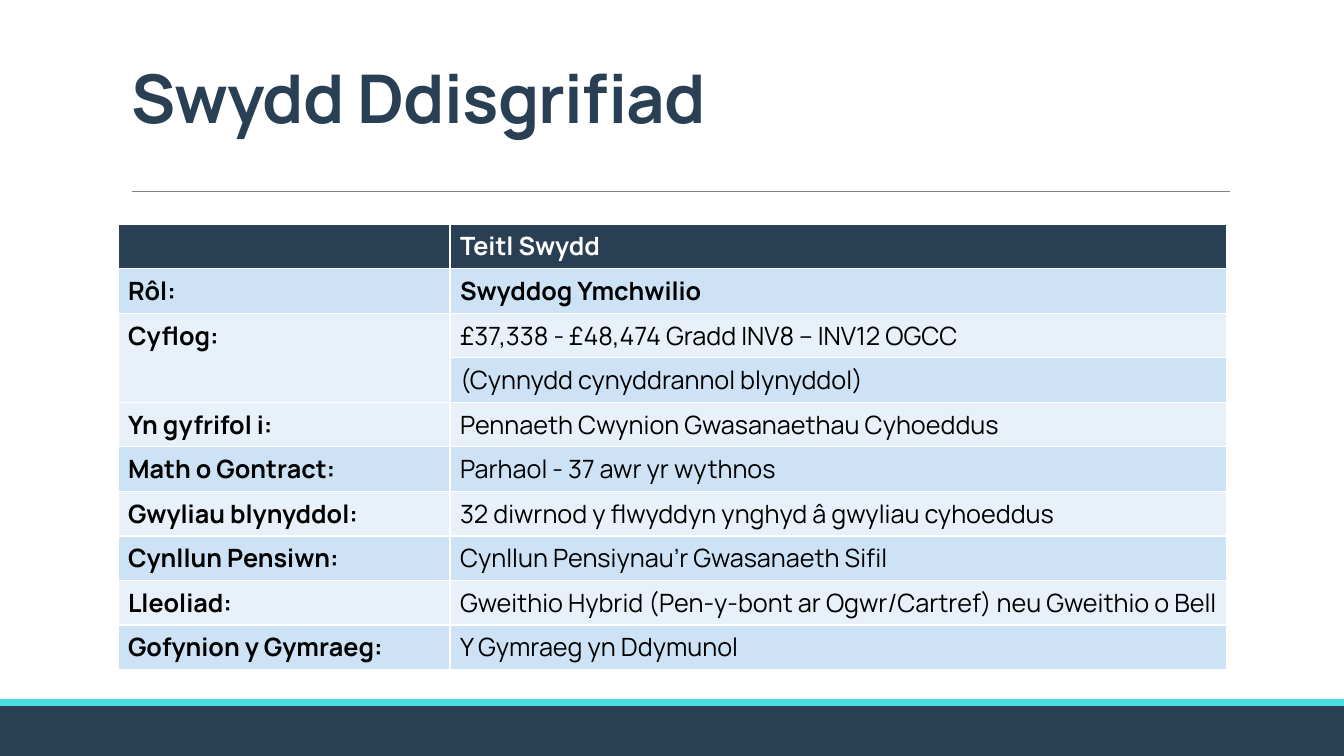
from lxml.etree import SubElement
from pptx import Presentation
from pptx.dml.color import RGBColor
from pptx.enum.shapes import MSO_CONNECTOR as Connector, MSO_SHAPE as Shape
from pptx.enum.text import MSO_ANCHOR as Anchor, MSO_AUTO_SIZE as AutoSize, PP_ALIGN as Align
from pptx.oxml.ns import qn
from pptx.util import Pt

NAVY = RGBColor(0x29, 0x40, 0x54)
TURQUOISE = RGBColor(0x4A, 0xDE, 0xE3)
GREY = RGBColor(0x80, 0x80, 0x80)
WHITE = RGBColor(0xFF, 0xFF, 0xFF)
BLACK = RGBColor(0, 0, 0)
BANDS = [RGBColor(0xE8, 0xF1, 0xFA), RGBColor(0xCD, 0xE3, 0xF5)]

FONT = "Manrope"
WIDTH, HEIGHT = 1344, 756
EMU_PER_PX = 914400 / 100.8

HEADER = ("", "Teitl Swydd")
DETAILS = [
    ("Rôl:", "Swyddog Ymchwilio"),
    ("Cyflog:", "£37,338 - £48,474 Gradd INV8 – INV12 OGCC"),
    ("", "(Cynnydd cynyddrannol blynyddol)"),
    ("Yn gyfrifol i:", "Pennaeth Cwynion Gwasanaethau Cyhoeddus"),
    ("Math o Gontract:", "Parhaol - 37 awr yr wythnos"),
    ("Gwyliau blynyddol:", "32 diwrnod y flwyddyn ynghyd â gwyliau cyhoeddus"),
    ("Cynllun Pensiwn:", "Cynllun Pensiynau’r Gwasanaeth Sifil"),
    ("Lleoliad:", "Gweithio Hybrid (Pen-y-bont ar Ogwr/Cartref) neu Gweithio o Bell"),
    ("Gofynion y Gymraeg:", "Y Gymraeg yn Ddymunol"),
]
ROLE_ROW, SALARY_ROW = 1, 2


def px(*lengths):
    """Turn pixel lengths into a list of EMU."""
    return [round(n * EMU_PER_PX) for n in lengths]


def write(tf, text, size=18, color=BLACK, bold=False, spacing=None):
    """Write one formatted run into the first paragraph and return the paragraph."""
    p = tf.paragraphs[0]
    p.font.size = Pt(size)
    if text:
        r = p.add_run()
        r.text = text
        r.font.name, r.font.size, r.font.bold = FONT, Pt(size), bold
        r.font.color.rgb = color
        if spacing is not None:
            r._r.get_or_add_rPr().set("spc", str(round(spacing * 100)))
    return p


def add_bar(slide, color, left, top, width, height):
    """Add a plain filled bar."""
    s = slide.shapes.add_shape(Shape.RECTANGLE, *px(left, top, width, height))
    s.shadow.inherit = False
    s.fill.solid()
    s.fill.fore_color.rgb = color
    s.line.fill.background()


def add_footer(slide, left, top, width, height, stripe=7):
    """Add the footer band with its stripe along the top edge."""
    add_bar(slide, NAVY, left, top + stripe, width, height - stripe)
    add_bar(slide, TURQUOISE, left, top, width, stripe)


def add_title(slide, text, left, top, width, height):
    """Place the title in the box and draw the rule below it."""
    title = slide.shapes.title
    title.left, title.top, title.width, title.height = px(left, top, width, height)
    tf = title.text_frame
    tf.auto_size = AutoSize.NONE
    tf.vertical_anchor = Anchor.BOTTOM
    p = write(tf, text, size=48, color=NAVY, bold=True, spacing=-0.5)
    p.alignment = Align.LEFT
    p.line_spacing = 0.85
    rule_y = top + height + 49
    line = slide.shapes.add_connector(
        Connector.STRAIGHT, *px(left + 11, rule_y, left + width, rule_y))
    line.line.color.rgb = GREY
    line.line.width = Pt(0.5)
    SubElement(line._element.spPr, qn("a:effectLst"))


def add_job_table(slide, left, top, width, height):
    """Add the job details, with labels in the narrow first column."""
    rows = [HEADER] + DETAILS
    table = slide.shapes.add_table(len(rows), 2, *px(left, top, width, height)).table
    label_width = width * 3 // 10
    for column, size in zip(table.columns, px(label_width, width - label_width)):
        column.width = size
    for i, texts in enumerate(rows):
        for j, text in enumerate(texts):
            cell = table.cell(i, j)
            cell.fill.solid()
            cell.fill.fore_color.rgb = BANDS[i % 2] if i else NAVY
            write(cell.text_frame, text, color=BLACK if i else WHITE,
                  bold=j == 0 or i <= ROLE_ROW)
    table.cell(SALARY_ROW, 0).merge(table.cell(SALARY_ROW + 1, 0))


def main():
    """Build and save the slide."""
    prs = Presentation()
    prs.slide_width, prs.slide_height = px(WIDTH, HEIGHT)
    slide = prs.slides.add_slide(prs.slide_layouts[5])
    add_footer(slide, 0, 699, WIDTH, HEIGHT - 699)
    add_title(slide, "Swydd Ddisgrifiad", 121, 31, 1109, 111)
    add_job_table(slide, 118, 224, 1109, 410)
    prs.save("out.pptx")


if __name__ == "__main__":
    main()
